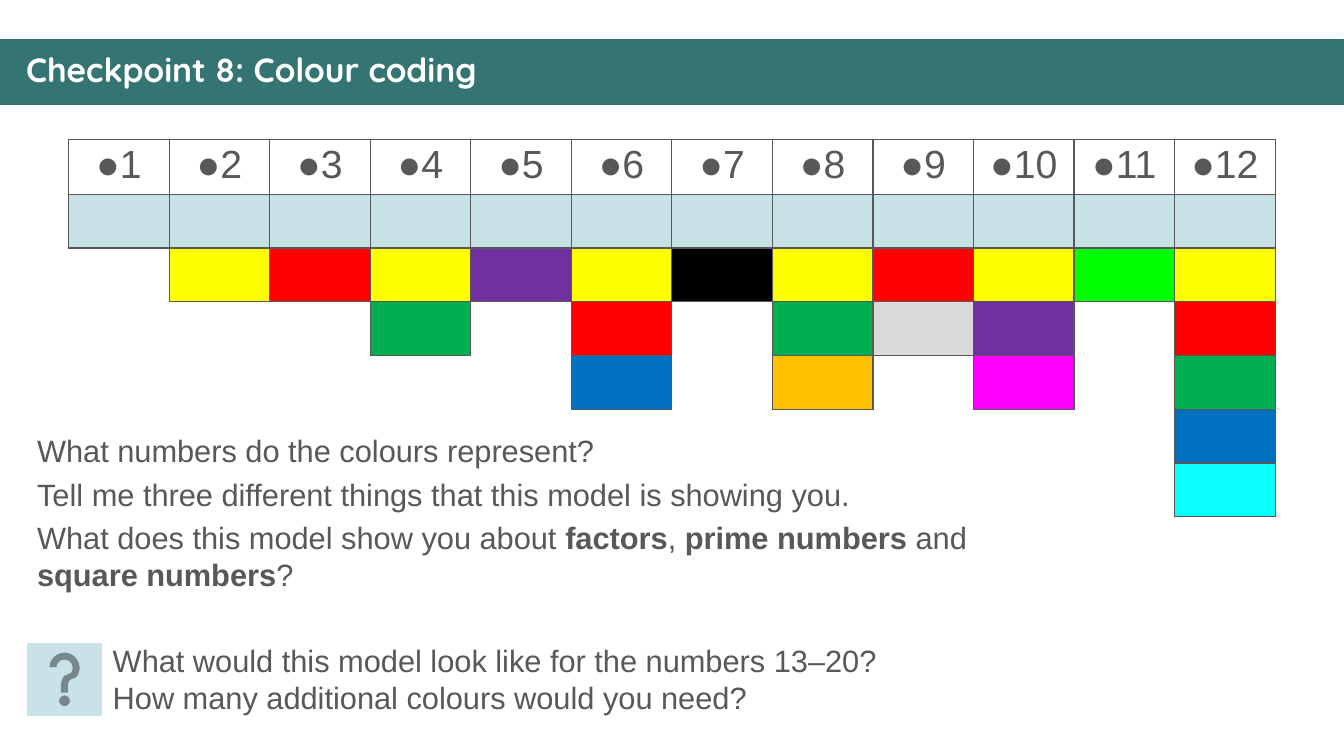
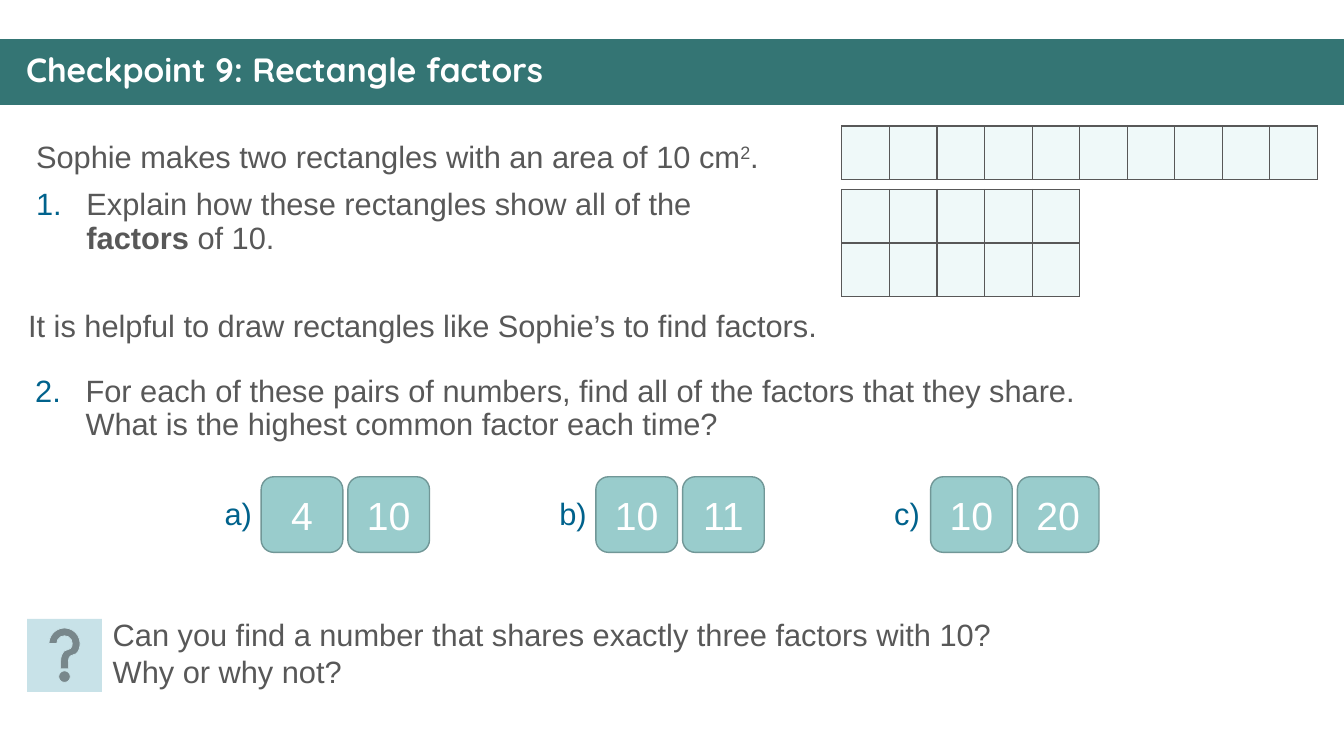
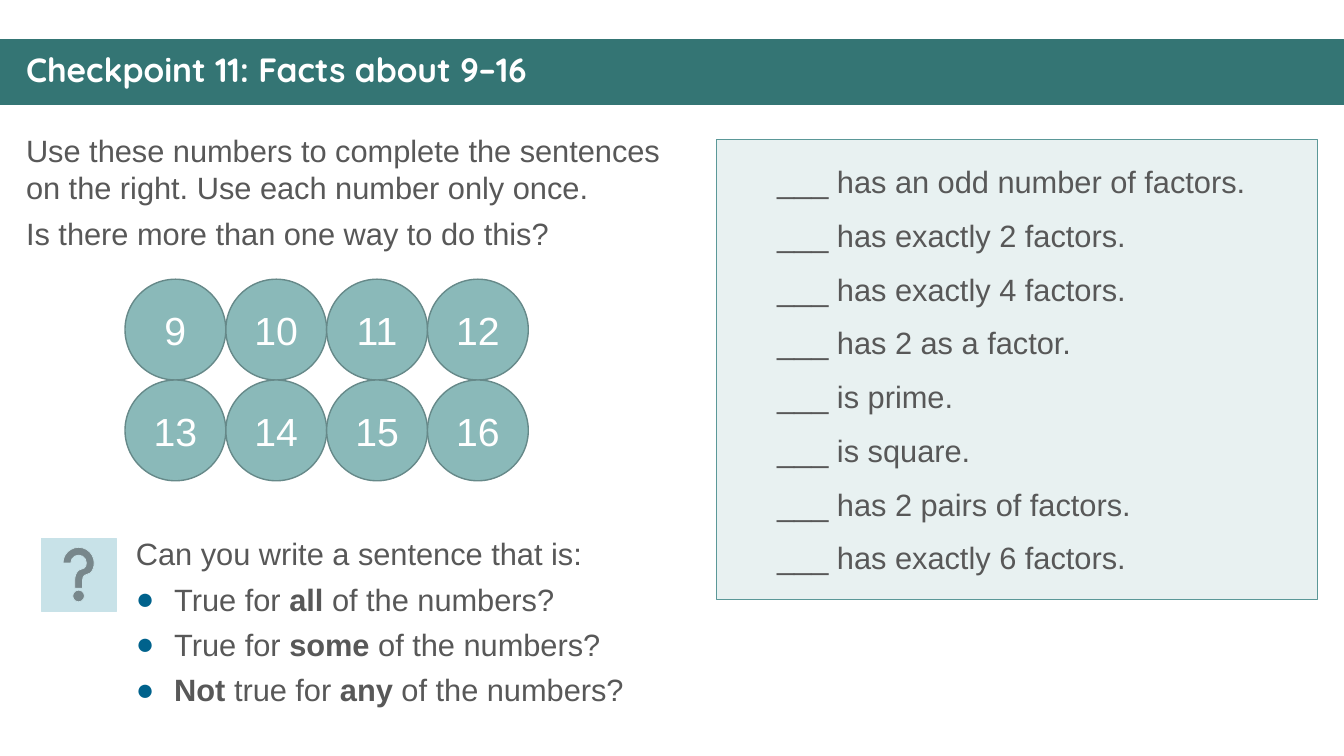
from dataclasses import dataclass
from typing import NamedTuple

from lxml import etree
from pptx import Presentation
from pptx.dml.color import RGBColor
from pptx.enum.shapes import MSO_SHAPE
from pptx.enum.text import MSO_ANCHOR, PP_ALIGN
from pptx.oxml.ns import qn
from pptx.util import Inches, Pt

RECTANGLE = MSO_SHAPE.RECTANGLE
ROUNDED = MSO_SHAPE.ROUNDED_RECTANGLE
OVAL = MSO_SHAPE.OVAL
HELP_BUTTON = MSO_SHAPE.ACTION_BUTTON_HELP
LEFT, CENTER = PP_ALIGN.LEFT, PP_ALIGN.CENTER
TOP, MIDDLE = MSO_ANCHOR.TOP, MSO_ANCHOR.MIDDLE

COLOURS = {
    "white": "FFFFFF",
    "text": "585858",
    "accent": "00628C",
    "band": "347574",
    "help": "C8E2E8",
    "square": "EFF9F9",
    "card": "99CCCC",
    "card line": "719797",
    "circle": "8AB9B9",
    "circle line": "668989",
    "panel": "E8F1F1",
    "panel line": "5B9898",
}
FACTOR_COLOURS = {
    1: "C8E2E8", 2: "FFFF00", 3: "FF0000", 4: "00B050", 5: "7030A0", 6: "0070C0",
    7: "000000", 8: "FFC000", 9: "D9D9D9", 10: "FF00FF", 11: "00FF00", 12: "0AFFFF",
}
BODY_FONT, TITLE_FONT = "Arial", "Quicksand"
BODY_SIZE, TITLE_SIZE, NUMBER_SIZE = 22, 24, 28
SLIDE_WIDTH, SLIDE_HEIGHT = 13.33, 7.5


class Area(NamedTuple):
    left: float
    top: float
    width: float
    height: float

    def lengths(self) -> tuple:
        return tuple(Inches(value) for value in self)


class Style(NamedTuple):
    fill: str
    line: str
    line_width: float


class Span(NamedTuple):
    text: str
    bold: bool = False
    raised: bool = False


@dataclass(frozen=True)
class Para:
    spans: tuple[Span, ...]
    size: float = BODY_SIZE
    font: str = BODY_FONT
    colour: str = COLOURS["text"]
    align: PP_ALIGN = LEFT
    before: float = 5
    after: float = 0
    line_spacing: float = 1.0
    margin: float = 0
    hanging: float = 0
    bullet: str = ""
    number: int = 0
    marker_colour: str = COLOURS["accent"]


HELP_STYLE = Style(COLOURS["help"], COLOURS["help"], 0.5)
CARD_STYLE = Style(COLOURS["card"], COLOURS["card line"], 1)
CIRCLE_STYLE = Style(COLOURS["circle"], COLOURS["circle line"], 1)
PANEL_STYLE = Style(COLOURS["panel"], COLOURS["panel line"], 0.5)


def plain(text: str, **options) -> Para:
    return Para((Span(text),), **options)


def add_marker(para, content: Para) -> None:
    """Give a paragraph its indent and its bullet or number."""
    properties = para._p.get_or_add_pPr()
    properties.set("marL", str(Inches(content.margin)))
    properties.set("indent", str(Inches(-content.hanging)))
    if not (content.bullet or content.number):
        return
    colour = etree.SubElement(properties, qn("a:buClr"))
    etree.SubElement(colour, qn("a:srgbClr"), val=content.marker_colour)
    etree.SubElement(properties, qn("a:buFont"), typeface=BODY_FONT)
    if content.bullet:
        etree.SubElement(properties, qn("a:buChar"), char=content.bullet)
    else:
        etree.SubElement(properties, qn("a:buAutoNum"), type="arabicPeriod",
                         startAt=str(content.number))


def write(frame, contents: list[Para]) -> None:
    for index, content in enumerate(contents):
        para = frame.add_paragraph() if index else frame.paragraphs[0]
        para.alignment = content.align
        para.space_before = Pt(content.before)
        para.space_after = Pt(content.after)
        para.line_spacing = content.line_spacing
        add_marker(para, content)
        for span in content.spans:
            run = para.add_run()
            run.text = span.text
            run.font.name = content.font
            run.font.size = Pt(content.size)
            run.font.bold = span.bold
            run.font.color.rgb = RGBColor.from_string(content.colour)
            if span.raised:
                run._r.get_or_add_rPr().set("baseline", "30000")


def add_text(page, area: Area, contents: list[Para], wrap: bool = True) -> None:
    frame = page.shapes.add_textbox(*area.lengths()).text_frame
    frame.word_wrap = wrap
    frame.vertical_anchor = TOP
    write(frame, contents)


def add_box(shapes, kind: MSO_SHAPE, area: Area, style: Style, contents: list[Para]) -> None:
    box = shapes.add_shape(kind, *area.lengths())
    box.shadow.inherit = False
    box.fill.solid()
    box.fill.fore_color.rgb = RGBColor.from_string(style.fill)
    box.line.color.rgb = RGBColor.from_string(style.line)
    box.line.width = Pt(style.line_width)
    box.text_frame.vertical_anchor = MIDDLE
    write(box.text_frame, contents)


def add_number(shapes, kind: MSO_SHAPE, area: Area, style: Style, number: int) -> None:
    label = plain(str(number), size=NUMBER_SIZE, colour=COLOURS["white"], align=CENTER)
    add_box(shapes, kind, area, style, [label])


def add_page(deck, title: str):
    """Add a blank slide with the shared title band."""
    page = deck.slides.add_slide(deck.slide_layouts[6])
    band = Style(COLOURS["band"], COLOURS["band"], 0)
    add_box(page.shapes, RECTANGLE, Area(0, 0.39, SLIDE_WIDTH, 0.65), band, [])
    heading = Para((Span(title, bold=True),), size=TITLE_SIZE, font=TITLE_FONT,
                   colour=COLOURS["white"], before=10, line_spacing=0.9)
    add_text(page, Area(0.16, 0.48, 13.04, 0.47), [heading])
    return page


def add_help(page, left: float, top: float) -> None:
    add_box(page.shapes, HELP_BUTTON, Area(left, top, 0.74, 0.72), HELP_STYLE, [])


def set_border(cell, side: str, visible: bool) -> None:
    line = etree.SubElement(cell._tc.get_or_add_tcPr(), qn(f"a:ln{side}"), w=str(Pt(1)))
    if visible:
        fill = etree.SubElement(line, qn("a:solidFill"))
        etree.SubElement(fill, qn("a:srgbClr"), val=COLOURS["text"])
    else:
        etree.SubElement(line, qn("a:noFill"))


def add_grid(page, area: Area, fills: list[list[str]]):
    """Draw a table of coloured cells; an empty fill is an unbordered white cell."""
    rows, columns = len(fills), len(fills[0])
    table = page.shapes.add_table(rows, columns, *area.lengths()).table
    table.first_row = table.horz_banding = False
    for column in table.columns:
        column.width = Inches(area.width / columns)
    for row in table.rows:
        row.height = Inches(area.height / rows)

    def filled(row: int, column: int) -> bool:
        return 0 <= row < rows and 0 <= column < columns and bool(fills[row][column])

    neighbours = {"L": (0, -1), "R": (0, 1), "T": (-1, 0), "B": (1, 0)}
    for row in range(rows):
        for column in range(columns):
            cell = table.cell(row, column)
            cell.margin_top = cell.margin_bottom = Inches(0.04)
            for side, (down, right) in neighbours.items():
                visible = filled(row, column) or filled(row + down, column + right)
                set_border(cell, side, visible)
            cell.fill.solid()
            colour = fills[row][column] or COLOURS["white"]
            cell.fill.fore_color.rgb = RGBColor.from_string(colour)
    return table


def add_colour_coding(deck) -> None:
    page = add_page(deck, "Checkpoint 8: Colour coding")
    numbers = list(FACTOR_COLOURS)
    row_count = 8
    fills = [[COLOURS["white"]] * len(numbers)]
    fills += [[""] * len(numbers) for _ in range(row_count - 1)]
    for column, number in enumerate(numbers):
        factors = [factor for factor in numbers if number % factor == 0]
        for row, factor in enumerate(factors, start=1):
            fills[row][column] = FACTOR_COLOURS[factor]
    table = add_grid(page, Area(0.68, 1.38, 11.97, 4.27), fills)
    for column, number in enumerate(numbers):
        heading = plain(str(number), size=NUMBER_SIZE, align=CENTER, bullet="●",
                        marker_colour=COLOURS["text"])
        write(table.cell(0, column).text_frame, [heading])

    add_text(page, Area(0.27, 4.23, 10.33, 1.73), [
        plain("What numbers do the colours represent?"),
        plain("Tell me three different things that this model is showing you."),
        Para((
            Span("What does this model show you about "),
            Span("factors", bold=True),
            Span(", "),
            Span("prime numbers", bold=True),
            Span(" and "),
            Span("square numbers", bold=True),
            Span("?"),
        )),
    ])
    add_help(page, 0.27, 6.38)
    add_text(page, Area(1.02, 6.32, 8.4, 0.84), [
        plain("What would this model look like for the numbers 13–20? "
              "How many additional colours would you need?"),
    ])


def add_rectangle_factors(deck) -> None:
    page = add_page(deck, "Checkpoint 9: Rectangle factors")
    numbered = {"before": 10, "line_spacing": 0.9, "margin": 0.5, "hanging": 0.5}
    add_text(page, Area(0.26, 1.36, 7.6, 1.36), [
        Para((
            Span("Sophie makes two rectangles with an area of 10 cm"),
            Span("2", raised=True),
            Span("."),
        ), before=10, line_spacing=0.9),
        Para((
            Span("Explain how these rectangles show all of the "),
            Span("factors ", bold=True),
            Span("of 10."),
        ), number=1, **numbered),
    ])
    square_width, square_height = 0.472, 0.53
    for top, rows, columns in ((1.25, 1, 10), (1.88, 2, 5)):
        area = Area(8.35, top, columns * square_width, rows * square_height)
        add_grid(page, area, [[COLOURS["square"]] * columns for _ in range(rows)])

    add_text(page, Area(0.18, 2.99, 8.78, 0.47), [
        plain("It is helpful to draw rectangles like Sophie’s to find factors."),
    ])
    add_text(page, Area(0.25, 3.68, 11.25, 1), [
        plain("For each of these pairs of numbers, find all of the factors that they share. "
              "What is the highest common factor each time?", number=2, **numbered),
    ])

    pairs = {"a)": (4, 10), "b)": (10, 11), "c)": (10, 20)}
    for index, (letter, pair) in enumerate(pairs.items()):
        left = 2.59 + 3.32 * index
        add_text(page, Area(left - 0.46, 4.86, 0.48, 0.47),
                 [plain(letter, colour=COLOURS["accent"])], wrap=False)
        group = page.shapes.add_group_shape()
        for place, number in enumerate(pair):
            area = Area(left + 0.86 * place, 4.73, 0.81, 0.75)
            add_number(group.shapes, ROUNDED, area, CARD_STYLE, number)

    add_help(page, 0.27, 6.14)
    add_text(page, Area(1.02, 6.06, 9.17, 0.84), [
        plain("Can you find a number that shares exactly three factors with 10? "
              "Why or why not?"),
    ])


def add_number_facts(deck) -> None:
    page = add_page(deck, "Checkpoint 11: Facts about 9–16")
    endings = (
        "has an odd number of factors.", "has exactly 2 factors.",
        "has exactly 4 factors.", "has 2 as a factor.", "is prime.", "is square.",
        "has 2 pairs of factors.", "has exactly 6 factors.",
    )
    sentences = [plain(f"___ {ending}", before=6, after=6, margin=0.5) for ending in endings]
    add_box(page.shapes, RECTANGLE, Area(7.11, 1.38, 5.96, 4.57), PANEL_STYLE, sentences)
    add_text(page, Area(0.16, 1.26, 6.85, 1.3), [
        plain("Use these numbers to complete the sentences on the right. "
              "Use each number only once."),
        plain("Is there more than one way to do this?", before=6),
    ])

    diameter, per_row = 1, 4
    for index, number in enumerate(range(9, 17)):
        row, column = divmod(index, per_row)
        area = Area(1.24 + column * diameter, 2.77 + row * diameter, diameter, diameter)
        add_number(page.shapes, OVAL, area, CIRCLE_STYLE, number)

    add_help(page, 0.41, 5.34)
    claims = (
        (Span("True for "), Span("all", bold=True)),
        (Span("True for "), Span("some", bold=True)),
        (Span("Not ", bold=True), Span("true for "), Span("any", bold=True)),
    )
    bullets = [
        Para((*claim, Span(" of the numbers?")), before=6, margin=0.38, hanging=0.38, bullet="●")
        for claim in claims
    ]
    add_text(page, Area(1.25, 5.26, 5.94, 1.83),
             [plain("Can you write a sentence that is:", before=6), *bullets])


def main() -> None:
    deck = Presentation()
    deck.slide_width = Inches(SLIDE_WIDTH)
    deck.slide_height = Inches(SLIDE_HEIGHT)
    add_colour_coding(deck)
    add_rectangle_factors(deck)
    add_number_facts(deck)
    deck.save("out.pptx")


if __name__ == "__main__":
    main()
